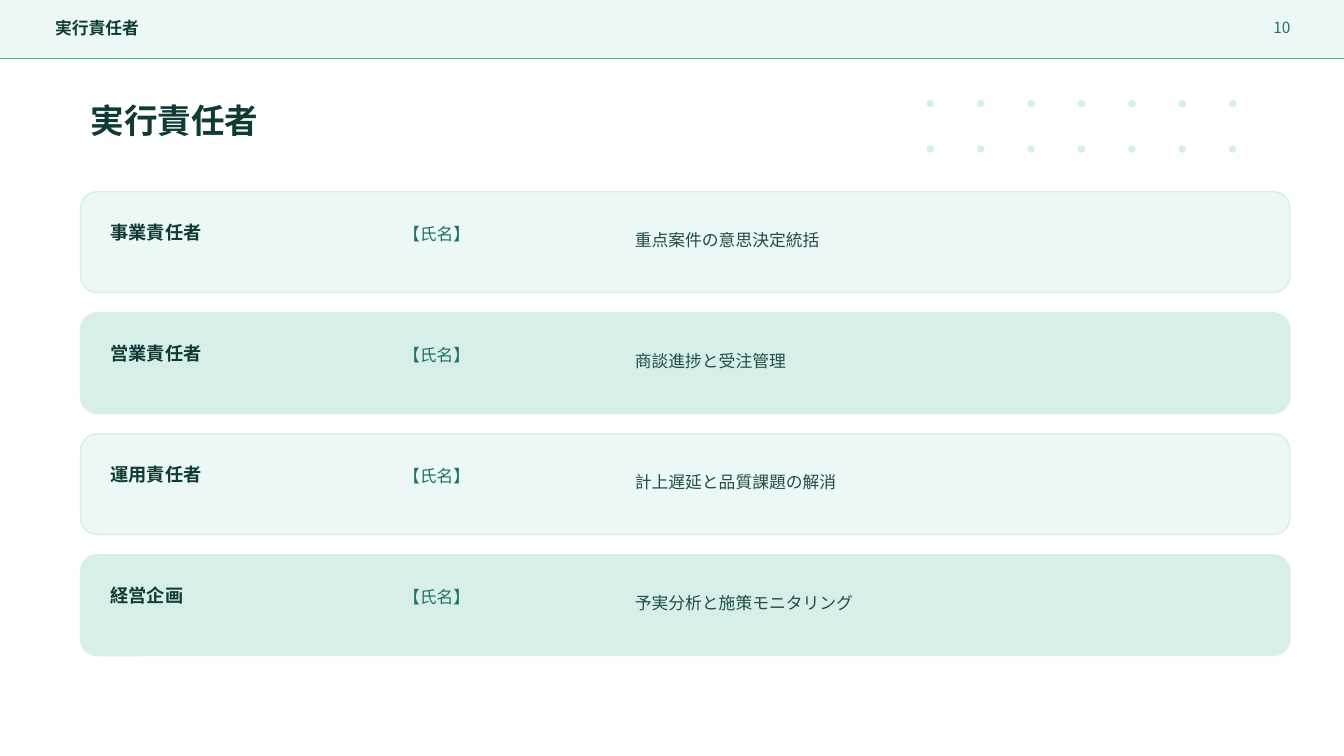
import pptx
import pptx.dml.color
import pptx.enum.shapes
import pptx.enum.text
import pptx.oxml.ns
import pptx.util
from lxml import etree
from pptx.util import Cm

COLORS = {
    "pale": "ECF8F5",
    "mint": "D8EFE9",
    "rule": "4DB79A",
    "heading": "0F3A35",
    "accent": "1F7267",
    "body": "1F4D47",
}
BODY_FONT = "Noto Sans CJK JP"
TITLE_FONT = "Cabin"
SLIDE_WIDTH = 33.87
SLIDE_HEIGHT = 19.05
HEADER_HEIGHT = 1.47
CARD_TOP = 4.83
CARD_PITCH = 3.05
NAME = "【氏名】"
OWNERS = [
    ("事業責任者", "重点案件の意思決定統括"),
    ("営業責任者", "商談進捗と受注管理"),
    ("運用責任者", "計上遅延と品質課題の解消"),
    ("経営企画", "予実分析と施策モニタリング"),
]
SHAPES = pptx.enum.shapes.MSO_SHAPE
ALIGN = pptx.enum.text.PP_ALIGN


def rgb(color):
    return pptx.dml.color.RGBColor.from_string(COLORS[color])


def add_panel(slide, kind, left, top, width, height, fill, line):
    panel = slide.shapes.add_shape(kind, Cm(left), Cm(top), Cm(width), Cm(height))
    panel.shadow.inherit = False
    panel.fill.solid()
    panel.fill.fore_color.rgb = rgb(fill)
    panel.line.color.rgb = rgb(line)
    panel.line.width = pptx.util.Pt(1)


def add_label(slide, text, left, top, width, height, size, color,
              bold=False, font_name=BODY_FONT, align=ALIGN.LEFT):
    label = slide.shapes.add_textbox(Cm(left), Cm(top), Cm(width), Cm(height))
    frame = label.text_frame
    frame.word_wrap = True
    frame.vertical_anchor = pptx.enum.text.MSO_ANCHOR.MIDDLE
    paragraph = frame.paragraphs[0]
    paragraph.text = text
    paragraph.alignment = align
    font = paragraph.font
    font.size = pptx.util.Pt(size)
    font.bold = bold
    font.color.rgb = rgb(color)
    font.name = font_name
    # Japanese glyphs take the East Asian typeface
    east_asian = etree.SubElement(font._element, pptx.oxml.ns.qn("a:ea"))
    east_asian.set("typeface", font_name)


def add_dots(slide):
    for row in range(2):
        for column in range(7):
            add_panel(slide, SHAPES.OVAL, 23.37 + 1.27 * column,
                      2.54 + 1.14 * row, 0.15, 0.15, "mint", "mint")


def add_header(slide):
    add_panel(slide, SHAPES.RECTANGLE, 0, 0, SLIDE_WIDTH, HEADER_HEIGHT, "pale", "pale")
    rule = slide.shapes.add_connector(
        pptx.enum.shapes.MSO_CONNECTOR.STRAIGHT,
        0, Cm(HEADER_HEIGHT), Cm(SLIDE_WIDTH), Cm(HEADER_HEIGHT))
    rule.line.color.rgb = rgb("rule")
    rule.line.width = pptx.util.Pt(1)
    etree.SubElement(rule._element.spPr, pptx.oxml.ns.qn("a:effectLst"))
    add_label(slide, "実行責任者", 1.14, 0.38, 23.62, 0.66, 12, "heading", bold=True)
    add_label(slide, "10", 30.99, 0.36, 1.78, 0.66, 11, "accent", align=ALIGN.RIGHT)


def add_owner_card(slide, top, role, duty, fill):
    add_panel(slide, SHAPES.ROUNDED_RECTANGLE, 2.03, top, 30.48, 2.54, fill, "mint")
    add_label(slide, role, 2.54, top + 0.71, 6.86, 0.61, 13, "heading", bold=True)
    add_label(slide, NAME, 9.91, top + 0.76, 5.33, 0.61, 12, "accent")
    add_label(slide, duty, 15.75, top + 0.64, 15.75, 1.14, 12, "body")


def main():
    presentation = pptx.Presentation()
    presentation.slide_width = Cm(SLIDE_WIDTH)
    presentation.slide_height = Cm(SLIDE_HEIGHT)
    slide = presentation.slides.add_slide(presentation.slide_layouts[6])
    add_dots(slide)
    add_header(slide)
    add_label(slide, "実行責任者", 2.03, 2.41, 28.96, 1.22, 24, "heading",
              bold=True, font_name=TITLE_FONT)
    for index, (role, duty) in enumerate(OWNERS):
        fill = "mint" if index % 2 else "pale"
        add_owner_card(slide, CARD_TOP + CARD_PITCH * index, role, duty, fill)
    presentation.save("out.pptx")


if __name__ == "__main__":
    main()
